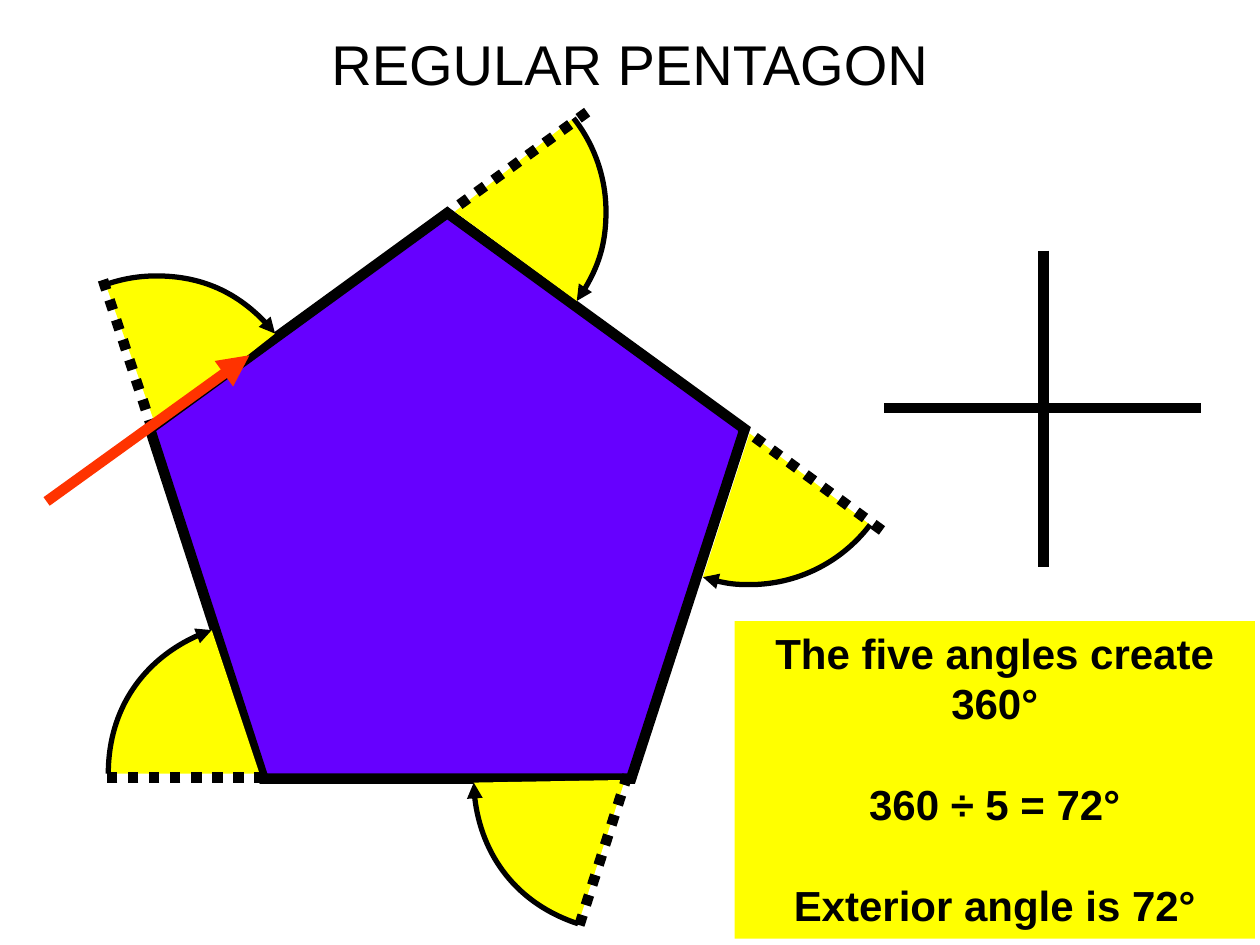
from copy import deepcopy
from math import cos, radians, sin, tan

from lxml.etree import SubElement
from pptx import Presentation
from pptx.dml.color import RGBColor
from pptx.enum.dml import MSO_LINE
from pptx.enum.shapes import MSO_CONNECTOR, MSO_SHAPE
from pptx.enum.text import MSO_ANCHOR, PP_ALIGN
from pptx.oxml.ns import qn
from pptx.util import Inches, Pt

BLACK = RGBColor(0x00, 0x00, 0x00)
PURPLE = RGBColor(0x66, 0x00, 0xFF)
YELLOW = RGBColor(0xFF, 0xFF, 0x00)
RED = RGBColor(0xFF, 0x33, 0x00)

ANGLE_RADIUS = 1.2

# Vertex and the clockwise bounds in degrees of each exterior angle
EXTERIOR_ANGLES = [
    ((1.24, 3.39), 250.5, 321.8),
    ((2.06, 6.14), 180, 251.6),
    ((4.96, 6.19), 108, 179),
    ((5.95, 3.44), 37.2, 108),
    ((3.61, 1.68), -38.2, 36.2),
]
# Prolonged sides of the pentagon
EXTENSIONS = [
    ((4.66, 0.89), (3.57, 1.68)),
    ((7, 4.21), (5.88, 3.39)),
    ((4.98, 6.15), (4.59, 7.37)),
    ((2.1, 6.17), (0.83, 6.17)),
    ((1.21, 3.41), (0.81, 2.2)),
]
CROSS = [((8.28, 1.99), (8.28, 4.5)), ((9.53, 3.24), (7.02, 3.24))]


def add_arrowhead(element):
    line = element.spPr.get_or_add_ln()
    SubElement(line, qn("a:tailEnd"), type="triangle")


def add_line(shapes, start, end, color=BLACK, dash=None, arrow=False):
    ends = [Inches(value) for value in (*start, *end)]
    connector = shapes.add_connector(MSO_CONNECTOR.STRAIGHT, *ends)
    connector.line.color.rgb = color
    connector.line.width = Pt(6)
    if dash:
        connector.line.dash_style = dash
    if arrow:
        add_arrowhead(connector._element)
    SubElement(connector._element.spPr, qn("a:effectLst"))


def add_pentagon(shapes):
    pentagon = shapes.add_shape(
        MSO_SHAPE.REGULAR_PENTAGON, Inches(1.19), Inches(1.69), Inches(4.72), Inches(4.49)
    )
    pentagon.shadow.inherit = False
    pentagon.fill.solid()
    pentagon.fill.fore_color.rgb = PURPLE
    pentagon.line.color.rgb = BLACK
    pentagon.line.width = Pt(6)
    SubElement(pentagon._element.spPr.get_or_add_ln(), qn("a:miter"), lim="800000")


def arc_points(vertex, start, end):
    """Return the arc's first point, then three Bezier points per piece.

    Pieces meet at multiples of 90 degrees, so control points stay in the arc's bounds.
    """
    x, y = vertex
    stops = [start, *(turn for turn in range(0, 360, 90) if start < turn < end), end]

    def point(degrees, tangent=0):
        a = radians(degrees)
        return (
            Inches(x + ANGLE_RADIUS * (cos(a) - tangent * sin(a))),
            Inches(y + ANGLE_RADIUS * (sin(a) + tangent * cos(a))),
        )

    points = [point(start)]
    for first, last in zip(stops, stops[1:]):
        pull = 4 / 3 * tan(radians(last - first) / 4)
        points += [point(first, pull), point(last, -pull), point(last)]
    return points


def bend(path, piece_count):
    """Turn each three leading line segments of the path into one Bezier curve."""
    segments = list(path)[1:1 + 3 * piece_count]
    for index in range(0, len(segments), 3):
        curve = SubElement(path, qn("a:cubicBezTo"))
        segments[index].addprevious(curve)
        for segment in segments[index:index + 3]:
            curve.append(segment[0])
            path.remove(segment)


def add_exterior_angle(shapes, vertex, start, end):
    """Draw a filled sector of which only the arc is stroked, with an arrowhead."""
    points = arc_points(vertex, start, end)
    builder = shapes.build_freeform(*points[0])
    corner = tuple(Inches(value) for value in vertex)
    builder.add_line_segments([*points[1:], corner], close=True)
    sector = builder.convert_to_shape()
    sector.shadow.inherit = False
    sector.fill.solid()
    sector.fill.fore_color.rgb = YELLOW
    sector.line.color.rgb = BLACK
    sector.line.width = Pt(3)
    add_arrowhead(sector._element)

    # Stroke the arc alone: drop the vertex and the closing side from its path
    filled_path = next(sector._element.iter(qn("a:path")))
    bend(filled_path, len(points) // 3)
    arc_path = deepcopy(filled_path)
    for segment in arc_path[-2:]:
        arc_path.remove(segment)
    arc_path.set("fill", "none")
    filled_path.set("stroke", "0")
    filled_path.addprevious(arc_path)


def write_paragraph(paragraph, text, size, bold=False):
    paragraph.alignment = PP_ALIGN.CENTER
    run = paragraph.add_run()
    run.text = text
    run.font.name = "Arial"
    run.font.size = Pt(size)
    run.font.bold = bold
    run.font.color.rgb = BLACK


def add_title(shapes, text):
    title = shapes.add_textbox(Inches(0.5), Inches(0.16), Inches(9), Inches(0.68))
    frame = title.text_frame
    frame.word_wrap = True
    frame.vertical_anchor = MSO_ANCHOR.MIDDLE
    write_paragraph(frame.paragraphs[0], text, 32)


def add_conclusion(shapes, statements):
    box = shapes.add_shape(
        MSO_SHAPE.RECTANGLE, Inches(5.83), Inches(4.93), Inches(4.13), Inches(2.52)
    )
    box.shadow.inherit = False
    box.fill.solid()
    box.fill.fore_color.rgb = YELLOW
    box.line.fill.background()
    frame = box.text_frame
    frame.word_wrap = True
    frame.vertical_anchor = MSO_ANCHOR.TOP
    for index, statement in enumerate(statements):
        paragraph = frame.add_paragraph() if index else frame.paragraphs[0]
        paragraph.line_spacing = Pt(28.8)
        paragraph.space_before = Pt(28.8 if index else 0)
        write_paragraph(paragraph, statement, 24, bold=True)


def main():
    presentation = Presentation()
    presentation.slide_width = Inches(10)
    presentation.slide_height = Inches(7.5)
    shapes = presentation.slides.add_slide(presentation.slide_layouts[6]).shapes

    add_pentagon(shapes)
    add_title(shapes, "REGULAR PENTAGON")
    add_conclusion(
        shapes, ["The five angles create 360°", "360 ÷ 5 = 72°", "Exterior angle is 72°"]
    )
    for vertex, start, end in EXTERIOR_ANGLES:
        add_exterior_angle(shapes, vertex, start, end)
    for start, end in EXTENSIONS:
        add_line(shapes, start, end, dash=MSO_LINE.ROUND_DOT)
    add_line(shapes, (0.37, 3.98), (1.98, 2.82), color=RED, arrow=True)
    cross = shapes.add_group_shape()
    for start, end in CROSS:
        add_line(cross.shapes, start, end)

    presentation.save("out.pptx")


if __name__ == "__main__":
    main()
